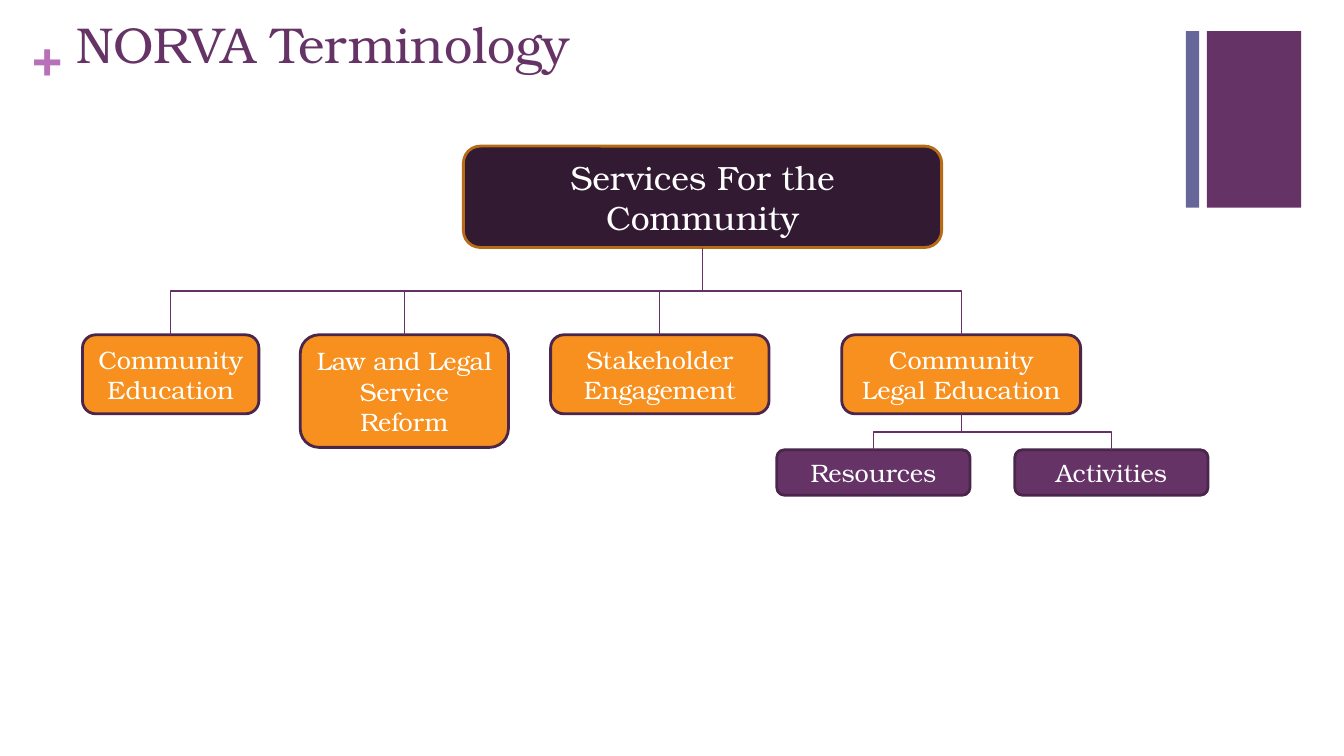
from dataclasses import dataclass

import pptx
import pptx.dml.color
import pptx.enum.shapes
import pptx.enum.text
import pptx.oxml.ns
import pptx.util
from lxml import etree

Pt = pptx.util.Pt
SHAPES = pptx.enum.shapes.MSO_SHAPE
ANCHOR = pptx.enum.text.MSO_ANCHOR
ALIGN = pptx.enum.text.PP_ALIGN
TOP_SITE, BOTTOM_SITE = 0, 2


@dataclass(frozen=True)
class Theme:
    font: str = "TeX Gyre Bonum"
    purple: str = "663366"
    slate: str = "666699"
    orchid: str = "B870B8"
    orange: str = "F7901E"
    dark: str = "331A33"
    bronze: str = "B76B16"
    plum: str = "4B264B"
    link: str = "653165"
    white: str = "FFFFFF"
    title_size: int = 36
    root_size: int = 24
    box_size: int = 18


THEME = Theme()


def rgb(value):
    return pptx.dml.color.RGBColor.from_string(value)


def write(frame, text, size, color, bold=False, align=ALIGN.LEFT):
    frame.word_wrap = True
    paragraph = frame.paragraphs[0]
    paragraph.alignment = align
    run = paragraph.add_run()
    run.text = text
    run.font.name = THEME.font
    run.font.size = Pt(size)
    run.font.bold = bold
    run.font.color.rgb = rgb(color)


def add_title(slide, text):
    title = slide.shapes.title
    title.left, title.top, title.width, title.height = Pt(47.5), Pt(5.8), Pt(737), Pt(90)
    title.text_frame.vertical_anchor = ANCHOR.TOP
    write(title.text_frame, text, THEME.title_size, THEME.purple)


def add_plus(slide):
    plus = slide.shapes.add_textbox(Pt(23.4), Pt(18), Pt(27.4), Pt(44)).text_frame
    plus.margin_left = plus.margin_right = plus.margin_top = plus.margin_bottom = 0
    write(plus, "+", THEME.title_size, THEME.orchid, bold=True)


def add_block(slide, kind, left, top, width, height, fill):
    block = slide.shapes.add_shape(kind, Pt(left), Pt(top), Pt(width), Pt(height))
    block.shadow.inherit = False
    block.fill.solid()
    block.fill.fore_color.rgb = rgb(fill)
    block.line.fill.background()
    return block


def add_box(slide, text, left, top, width, height, fill, border=THEME.plum, size=THEME.box_size):
    box = add_block(slide, SHAPES.ROUNDED_RECTANGLE, left, top, width, height, fill)
    box.line.color.rgb = rgb(border)
    box.line.width = Pt(2)
    box.text_frame.vertical_anchor = ANCHOR.MIDDLE
    write(box.text_frame, text, size, THEME.white, align=ALIGN.CENTER)
    return box


def link(slide, parent, child):
    """Join parent to child with an elbow that leaves downwards.

    An elbow starts out sideways, so its frame is turned a quarter about its centre.
    """
    elbow = slide.shapes.add_connector(pptx.enum.shapes.MSO_CONNECTOR.ELBOW, 0, 0, 0, 0)
    elbow.begin_connect(parent, BOTTOM_SITE)
    elbow.end_connect(child, TOP_SITE)
    goes_right = elbow.end_x > elbow.begin_x
    across, down = elbow.width, elbow.height
    shift = (across - down) // 2
    elbow.left, elbow.top = elbow.left + shift, elbow.top - shift
    elbow.width, elbow.height = down, across
    properties = elbow.element.spPr
    frame = properties.find(pptx.oxml.ns.qn("a:xfrm"))
    frame.set("rot", str((270 if goes_right else 90) * 60000))
    frame.set("flipH", "1" if goes_right else "0")
    elbow.line.color.rgb = rgb(THEME.link)
    elbow.line.width = Pt(1)
    etree.SubElement(properties, pptx.oxml.ns.qn("a:effectLst"))


def main():
    deck = pptx.Presentation()
    deck.slide_width, deck.slide_height = Pt(960), Pt(540)
    slide = deck.slides.add_slide(deck.slide_layouts[5])

    for left, width, fill in ((862, 67.5, THEME.purple), (847, 9.5, THEME.slate)):
        add_block(slide, SHAPES.RECTANGLE, left, 22.3, width, 126, fill)
    add_plus(slide)
    add_title(slide, "NORVA Terminology")

    root = add_box(slide, "Services For the Community", 331, 104.4, 341.6, 72.4,
                   THEME.dark, THEME.bronze, THEME.root_size)
    services = [
        add_box(slide, text, left, 239.2, width, height, THEME.orange)
        for text, left, width, height in (
            ("Community Education", 58.9, 126, 56.4),
            ("Law and Legal Service Reform", 214.5, 148.7, 80.4),
            ("Stakeholder Engagement", 393.3, 156, 56.4),
            ("Community Legal Education", 601.3, 170.6, 56.4),
        )
    ]
    offerings = [
        add_box(slide, text, left, 321.3, 138, 32.4, THEME.purple)
        for text, left in (("Resources", 554.9), ("Activities", 724.9))
    ]
    for parent, children in ((root, services), (services[-1], offerings)):
        for child in children:
            link(slide, parent, child)

    deck.save("out.pptx")


if __name__ == "__main__":
    main()
